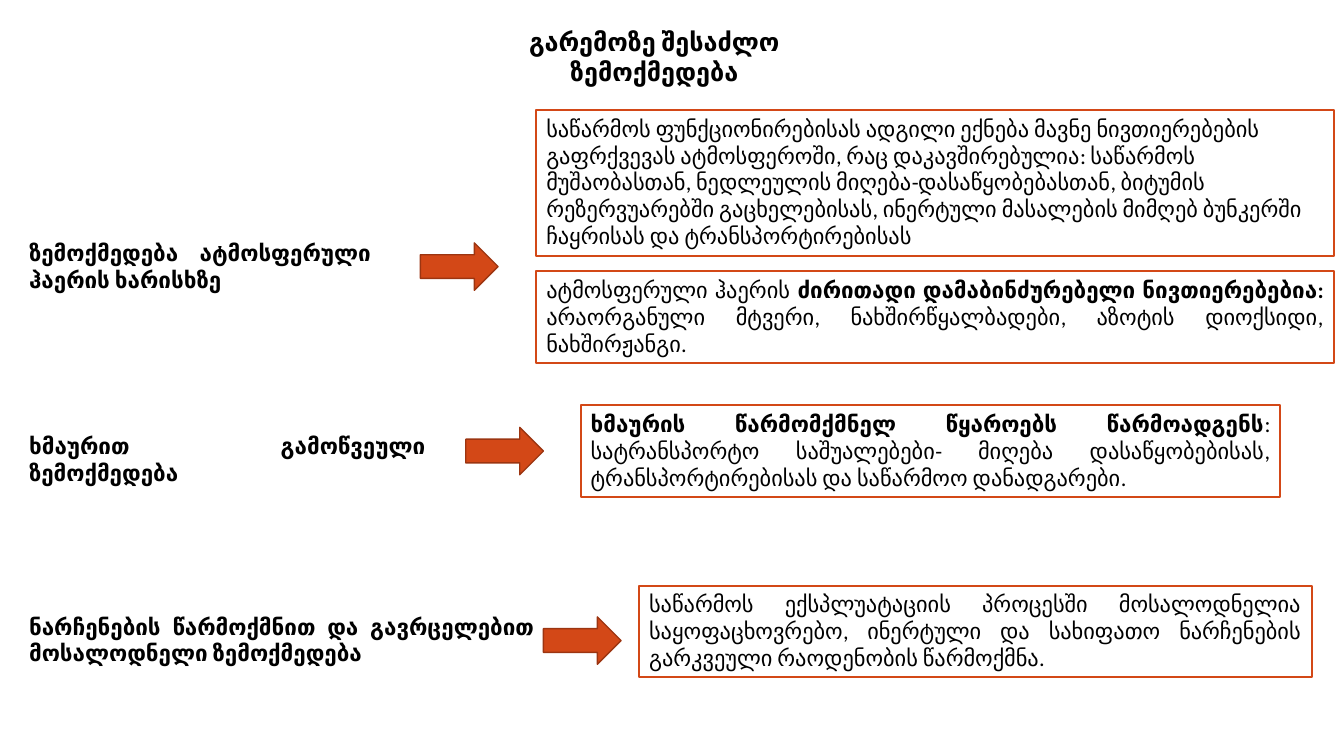
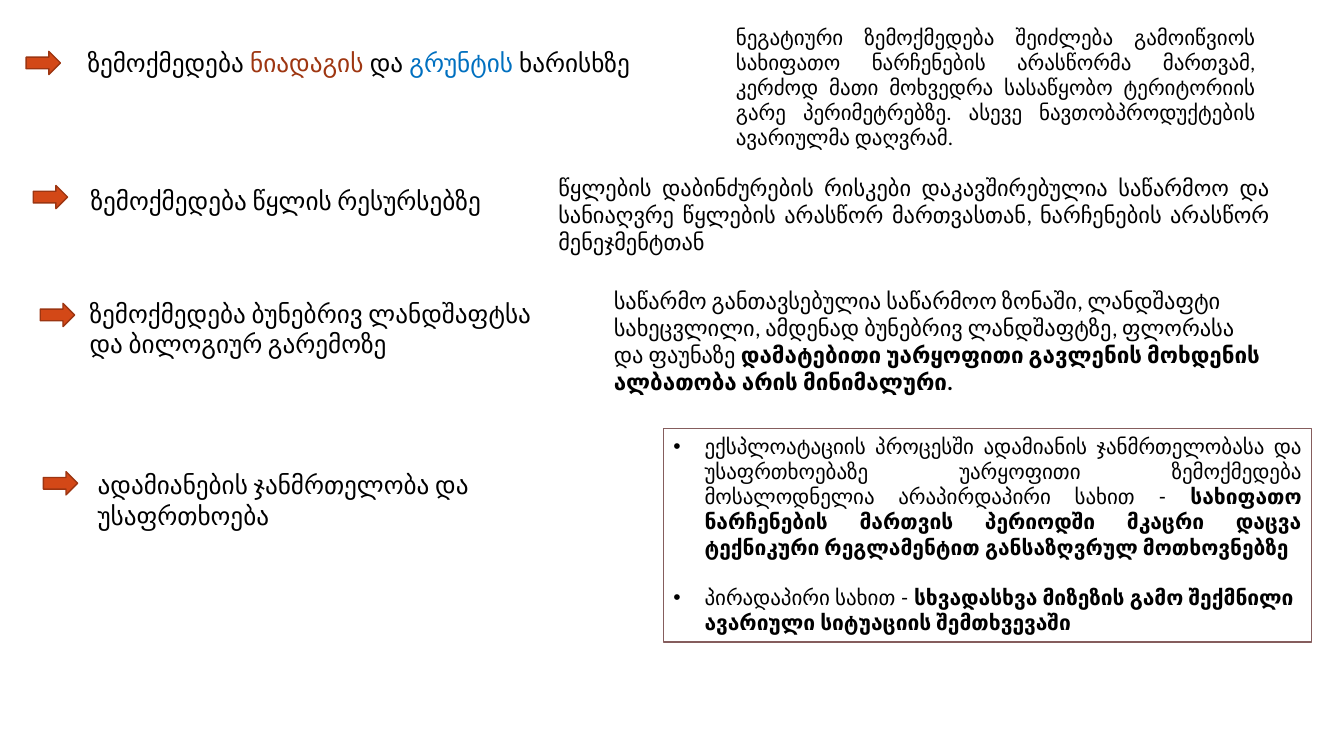
from dataclasses import dataclass

import pptx
import pptx.dml.color
import pptx.enum.shapes
import pptx.enum.text
import pptx.oxml
import pptx.oxml.ns
import pptx.util

RGBColor = pptx.dml.color.RGBColor
MSO_SHAPE = pptx.enum.shapes.MSO_SHAPE
ALIGN = pptx.enum.text.PP_ALIGN

PX = 9144  # EMU in one px, 100 px to the inch
SLIDE_SIZE = (1333, 750)
BLACK = RGBColor(0x00, 0x00, 0x00)
WHITE = RGBColor(0xFF, 0xFF, 0xFF)
ORANGE = RGBColor(0xD3, 0x48, 0x17)
ORANGE_EDGE = RGBColor(0x9C, 0x35, 0x11)
SOIL_BROWN = RGBColor(0x9E, 0x36, 0x11)
GROUND_BLUE = RGBColor(0x00, 0x70, 0xC0)
SAFETY_EDGE = RGBColor(0x85, 0x5D, 0x5D)

BODY_FONT = "Calibri"
SLAB_FONT = "Roboto Slab"
LARGE_ARROW = (77, 47)
SMALL_ARROW = (34, 23)
BULLET_INDENT = 31


@dataclass
class Part:
    """A stretch of text in one style."""
    text: str
    bold: bool = False
    color: RGBColor = BLACK


def emu(*lengths):
    return [pptx.util.Emu(length * PX) for length in lengths]


def add_box(slide, at, border=None, border_width=1.5):
    """Add a text box, or a white rectangle when a border colour is given."""
    if border is None:
        box = slide.shapes.add_textbox(*emu(*at))
    else:
        box = slide.shapes.add_shape(MSO_SHAPE.RECTANGLE, *emu(*at))
        box.shadow.inherit = False
        box.fill.solid()
        box.fill.fore_color.rgb = WHITE
        box.line.color.rgb = border
        box.line.width = pptx.util.Pt(border_width)
    box.text_frame.word_wrap = True
    box.text_frame.vertical_anchor = pptx.enum.text.MSO_ANCHOR.TOP
    return box.text_frame


def write(paragraph, parts, size=16, align=ALIGN.JUSTIFY, font=BODY_FONT):
    paragraph.alignment = align
    for part in parts:
        run = paragraph.add_run()
        run.text = part.text
        run.font.name = font
        run.font.size = pptx.util.Pt(size)
        run.font.bold = part.bold
        run.font.color.rgb = part.color


def add_bullet(paragraph):
    properties = paragraph._p.get_or_add_pPr()
    indent, = emu(BULLET_INDENT)
    properties.set("marL", str(indent))
    properties.set("indent", str(-indent))
    namespace = pptx.oxml.ns.nsdecls("a")
    for element in (f'<a:buFont {namespace} typeface="Arial"/>',
                    f'<a:buChar {namespace} char="•"/>'):
        properties.append(pptx.oxml.parse_xml(element))


def add_text(slide, at, *parts, **style):
    write(add_box(slide, at).paragraphs[0], parts, **style)


def add_framed_text(slide, at, *parts, **style):
    frame = add_box(slide, at, border=ORANGE)
    write(frame.paragraphs[0], parts, **style)


def add_arrow(slide, left, top, size):
    arrow = slide.shapes.add_shape(MSO_SHAPE.RIGHT_ARROW, *emu(left, top, *size))
    arrow.shadow.inherit = False
    arrow.fill.solid()
    arrow.fill.fore_color.rgb = ORANGE
    arrow.line.color.rgb = ORANGE_EDGE
    arrow.line.width = pptx.util.Pt(1)


def add_impact(slide, top, width, name, arrow_at):
    """Add a bold impact name at the left margin and the arrow after it."""
    add_text(slide, (19, top, width, 64), Part(name, bold=True))
    add_arrow(slide, *arrow_at, LARGE_ARROW)


def add_topic(slide, arrow_at, at, *parts, font=BODY_FONT):
    """Add a topic line with a small arrow in front of it."""
    add_arrow(slide, *arrow_at, SMALL_ARROW)
    add_text(slide, at, *parts, size=18, align=ALIGN.LEFT, font=font)


def build_impacts(slide):
    add_text(slide, (451, 21, 396, 71),
             Part("გარემოზე შესაძლო ზემოქმედება", bold=True),
             size=18, align=ALIGN.CENTER)

    add_impact(slide, 232, 359, "ზემოქმედება ატმოსფერული ჰაერის ხარისხზე",
               (417, 241))
    add_framed_text(
        slide, (532, 109, 791, 145),
        Part("საწარმოს ფუნქციონირებისას ადგილი ექნება მავნე ნივთიერებების "
             "გაფრქვევას ატმოსფეროში, რაც დაკავშირებულია: საწარმოს "
             "მუშაობასთან, ნედლეულის მიღება-დასაწყობებასთან, ბიტუმის "
             "რეზერვუარებში გაცხელებისას, ინერტული მასალების მიმღებ ბუნკერში "
             "ჩაყრისას და ტრანსპორტირებისას"),
        align=ALIGN.LEFT)
    add_framed_text(
        slide, (532, 269, 791, 91),
        Part("ატმოსფერული ჰაერის "),
        Part("ძირითადი დამაბინძურებელი ნივთიერებებია: ", bold=True),
        Part("არაორგანული მტვერი, ნახშირწყალბადები, აზოტის დიოქსიდი, "
             "ნახშირჟანგი."))

    add_impact(slide, 424, 413, "ხმაურით გამოწვეული ზემოქმედება", (462, 424))
    add_framed_text(
        slide, (576, 402, 694, 91),
        Part("ხმაურის წარმომქმნელ წყაროებს წარმოადგენს", bold=True),
        Part(": სატრანსპორტო საშუალებები- მიღება დასაწყობებისას, "
             "ტრანსპორტირებისას და საწარმოო დანადგარები."))

    add_impact(slide, 603, 521,
               "ნარჩენების წარმოქმნით და გავრცელებით მოსალოდნელი ზემოქმედება",
               (539, 612))
    add_framed_text(
        slide, (634, 581, 667, 91),
        Part("საწარმოს ექსპლუატაციის პროცესში მოსალოდნელია საყოფაცხოვრებო, "
             "ინერტული და სახიფათო ნარჩენების გარკვეული რაოდენობის წარმოქმნა."))


def build_topics(slide):
    add_topic(slide, (26, 51), (77, 42, 580, 40),
              Part("ზემოქმედება"),
              Part(" ნიადაგის ", color=SOIL_BROWN),
              Part("და "),
              Part("გრუნტის", color=GROUND_BLUE),
              Part(" ხარისხზე"),
              font=SLAB_FONT)
    add_text(slide, (720, 19, 535, 136),
             Part("ნეგატიური ზემოქმედება შეიძლება გამოიწვიოს სახიფათო "
                  "ნარჩენების არასწორმა მართვამ, კერძოდ მათი მოხვედრა "
                  "სასაწყობო ტერიტორიის გარე პერიმეტრებზე. ასევე "
                  "ნავთობპროდუქტების ავარიულმა დაღვრამ."),
             size=15)

    add_topic(slide, (33, 184), (80, 179, 420, 40),
              Part("ზემოქმედება წყლის რესურსებზე"))
    add_text(slide, (544, 168, 726, 91),
             Part("წყლების დაბინძურების რისკები დაკავშირებულია საწარმოო და "
                  "სანიაღვრე წყლების არასწორ მართვასთან, ნარჩენების არასწორ "
                  "მენეჯმენტთან"))

    add_topic(slide, (40, 301), (79, 291, 489, 71),
              Part("ზემოქმედება ბუნებრივ ლანდშაფტსა და ბილოგიურ გარემოზე"))
    add_text(slide, (599, 280, 667, 118),
             Part("საწარმო განთავსებულია საწარმოო ზონაში, ლანდშაფტი "
                  "სახეცვლილი, ამდენად ბუნებრივ ლანდშაფტზე, ფლორასა და "
                  "ფაუნაზე "),
             Part("დამატებითი უარყოფითი გავლენის მოხდენის ალბათობა არის "
                  "მინიმალური.", bold=True),
             align=ALIGN.LEFT)

    add_topic(slide, (43, 468), (87, 461, 550, 71),
              Part("ადამიანების ჯანმრთელობა და უსაფრთხოება"))
    add_safety_risks(slide)


def add_safety_risks(slide):
    frame = add_box(slide, (658, 425, 643, 212), SAFETY_EDGE, border_width=1)
    indirect = frame.paragraphs[0]
    direct = frame.add_paragraph()
    for risk in (indirect, direct):
        add_bullet(risk)
    write(indirect,
          (Part("ექსპლოატაციის პროცესში ადამიანის ჯანმრთელობასა და "
                "უსაფრთხოებაზე უარყოფითი ზემოქმედება მოსალოდნელია "
                "არაპირდაპირი სახით - "),
           Part("სახიფათო ნარჩენების მართვის პერიოდში მკაცრი დაცვა "
                "ტექნიკური რეგლამენტით განსაზღვრულ მოთხოვნებზე", bold=True)),
          size=15, font=SLAB_FONT)
    direct.space_before = pptx.util.Pt(18)
    write(direct,
          (Part("პირადაპირი სახით - "),
           Part("სხვადასხვა მიზეზის გამო შექმნილი ავარიული სიტუაციის "
                "შემთხვევაში", bold=True)),
          size=15, align=ALIGN.LEFT, font=SLAB_FONT)


def main():
    deck = pptx.Presentation()
    deck.slide_width, deck.slide_height = emu(*SLIDE_SIZE)
    blank = deck.slide_layouts[6]
    for build in (build_impacts, build_topics):
        build(deck.slides.add_slide(blank))
    deck.save("out.pptx")


if __name__ == "__main__":
    main()
